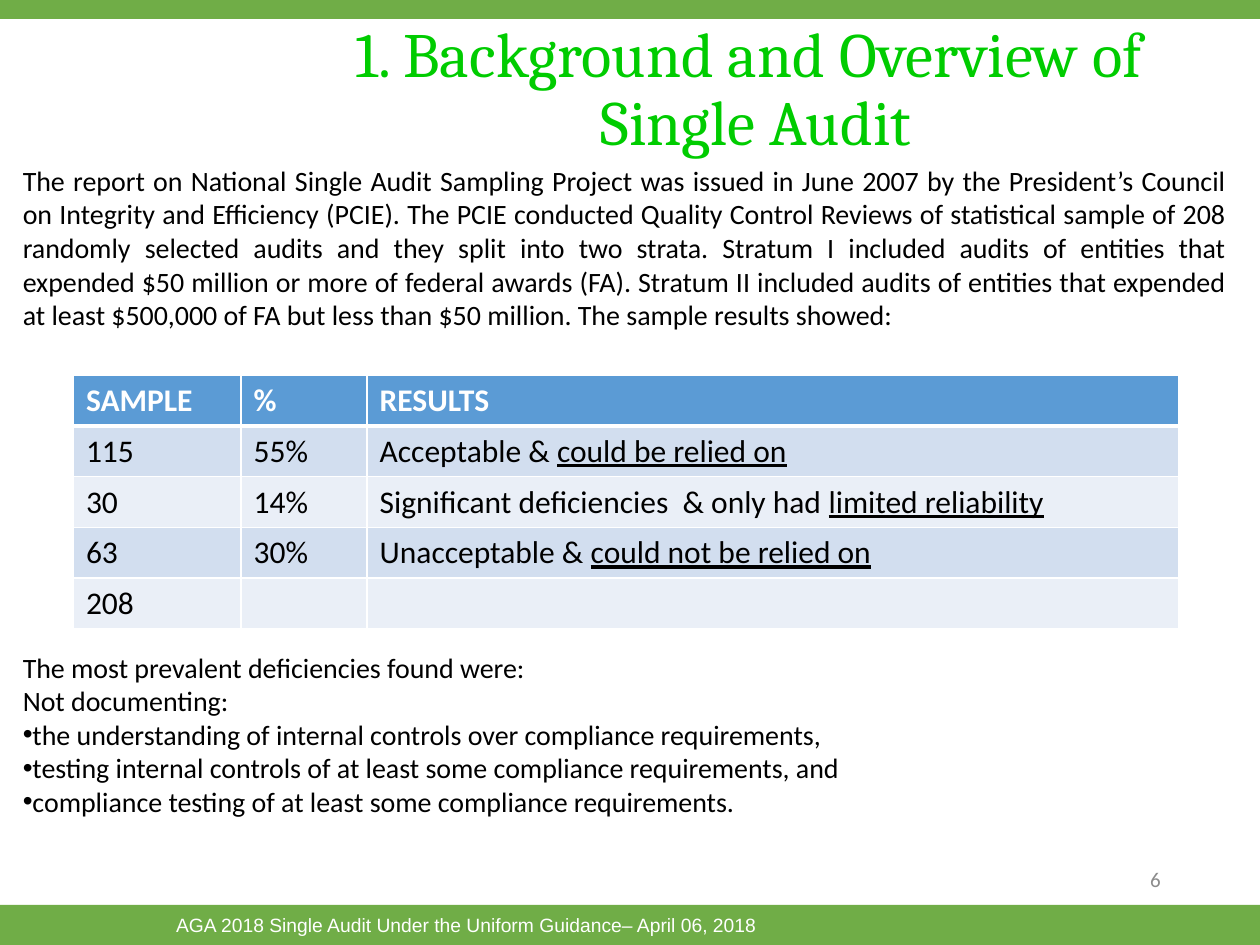
from lxml.etree import SubElement
from pptx import Presentation
from pptx.dml.color import RGBColor
from pptx.enum.shapes import MSO_SHAPE
from pptx.enum.text import MSO_ANCHOR, PP_ALIGN
from pptx.oxml import parse_xml
from pptx.oxml.ns import nsdecls, qn
from pptx.util import Cm, Pt

COLORS = {
    "bar": "70AD47", "title": "00CC00", "text": "000000", "white": "FFFFFF",
    "number": "8C8C8C", "header": "5B9BD5", "odd": "D2DEEF", "even": "EAEFF7",
}
TITLE = "1. Background and Overview of \vSingle Audit"
FOOTER = "AGA 2018 Single Audit Under the Uniform Guidance– April 06, 2018"
PAGE_NUMBER = "6"
INTRO = [
    "The report on National Single Audit Sampling Project was issued in June 2007 by the "
    "President’s Council on Integrity and Efficiency (PCIE). The PCIE conducted Quality "
    "Control Reviews of statistical sample of 208 randomly selected audits and they split "
    "into two strata. Stratum I included audits of entities that expended $50 million or "
    "more of federal awards (FA). Stratum II included audits of entities that expended at "
    "least $500,000 of FA but less than $50 million. The sample results showed:",
]
FINDINGS = ["The most prevalent deficiencies found were:", "Not documenting:"]
BULLETS = [
    "the understanding of internal controls over compliance requirements,",
    "testing internal controls of at least some compliance requirements, and",
    "compliance testing of at least some compliance requirements.",
]
ROWS = [
    [("SAMPLE",), ("%",), ("RESULTS",)],
    [("115",), ("55%",), ("Acceptable & ", "could be relied on")],
    [("30",), ("14%",), ("Significant deficiencies  & only had ", "limited reliability")],
    [("63",), ("30%",), ("Unacceptable & ", "could not be relied on")],
    [("208",), (), ()],
]
COLUMN_WIDTHS = [3.38, 2.54, 16.36]
ROW_HEIGHT = 1.02
FOOTER_TOP = 18.24
NUMBER_HEIGHT = 1.02


def style(font, name, size, color):
    font.name, font.size = name, Pt(size)
    font.color.rgb = RGBColor.from_string(COLORS[color])


def add_bar(page, top, height):
    bar = page.shapes.add_shape(MSO_SHAPE.RECTANGLE, 0, Cm(top), Cm(25.4), Cm(height))
    bar.shadow.inherit = False
    bar.fill.solid()
    bar.fill.fore_color.rgb = RGBColor.from_string(COLORS["bar"])
    bar.line.fill.background()
    return bar


def add_text(page, place, lines, name, size, color, align, anchor=MSO_ANCHOR.TOP):
    box = page.shapes.add_textbox(*map(Cm, place))
    frame = box.text_frame
    frame.word_wrap = True
    frame.vertical_anchor = anchor
    frame.text = "\n".join(lines)
    for paragraph in frame.paragraphs:
        paragraph.alignment = align
        for span in paragraph.runs:
            style(span.font, name, size, color)
    return frame


def add_bullet(paragraph):
    properties = paragraph._p.get_or_add_pPr()
    properties.set("marL", "0")
    properties.set("indent", str(-Cm(0.95)))
    SubElement(properties, qn("a:buFont")).set("typeface", "Arial")
    SubElement(properties, qn("a:buChar")).set("char", "•")


def add_borders(cell, header):
    properties = cell._tc.get_or_add_tcPr()
    for index, side in enumerate("LRTB"):
        width = Pt(3 if header and side == "B" else 1)
        properties.insert(index, parse_xml(
            f'<a:ln{side} {nsdecls("a")} w="{width}"><a:solidFill>'
            f'<a:srgbClr val="{COLORS["white"]}"/></a:solidFill></a:ln{side}>'))


def add_results(page):
    table = page.shapes.add_table(
        len(ROWS), len(COLUMN_WIDTHS), Cm(1.48), Cm(7.57),
        Cm(sum(COLUMN_WIDTHS)), Cm(ROW_HEIGHT * len(ROWS))).table
    for column, width in zip(table.columns, COLUMN_WIDTHS):
        column.width = Cm(width)
    for row_index, row in enumerate(ROWS):
        table.rows[row_index].height = Cm(ROW_HEIGHT)
        header = row_index == 0
        fill = "header" if header else "odd" if row_index % 2 else "even"
        for column_index, parts in enumerate(row):
            cell = table.cell(row_index, column_index)
            cell.fill.solid()
            cell.fill.fore_color.rgb = RGBColor.from_string(COLORS[fill])
            add_borders(cell, header)
            for part_index, part in enumerate(parts):
                span = cell.text_frame.paragraphs[0].add_run()
                span.text = part
                style(span.font, "Calibri", 18, "white" if header else "text")
                span.font.bold = header
                span.font.underline = part_index == 1


def main():
    deck = Presentation()
    deck.slide_width, deck.slide_height = Cm(25.4), Cm(19.05)
    page = deck.slides.add_slide(deck.slide_layouts[6])

    add_bar(page, 0, 0.38)
    footer = add_bar(page, FOOTER_TOP, 0.81).text_frame
    footer.text = FOOTER
    footer.vertical_anchor = MSO_ANCHOR.MIDDLE
    line = footer.paragraphs[0]
    line.alignment = PP_ALIGN.LEFT
    line._p.get_or_add_pPr().set("marL", str(Cm(3.3)))
    style(line.runs[0].font, "Arial", 11, "white")

    add_text(page, (17.93, FOOTER_TOP - NUMBER_HEIGHT, 5.72, NUMBER_HEIGHT), [PAGE_NUMBER],
             "Calibri", 12, "number", PP_ALIGN.RIGHT, MSO_ANCHOR.MIDDLE)
    title = add_text(page, (3.81, 0.25, 22.86, 3.18), [TITLE], "Cambria", 36, "title",
                     PP_ALIGN.CENTER, MSO_ANCHOR.MIDDLE)
    title.paragraphs[0].line_spacing = 0.9

    add_text(page, (0.21, 3.17, 24.77, 3.7), INTRO, "Calibri", 16, "text", PP_ALIGN.JUSTIFY)
    add_results(page)
    findings = add_text(page, (0.21, 12.98, 24.77, 3.7), FINDINGS + BULLETS,
                        "Calibri", 16, "text", PP_ALIGN.JUSTIFY)
    for paragraph in findings.paragraphs[len(FINDINGS):]:
        add_bullet(paragraph)

    deck.save("out.pptx")


if __name__ == "__main__":
    main()
